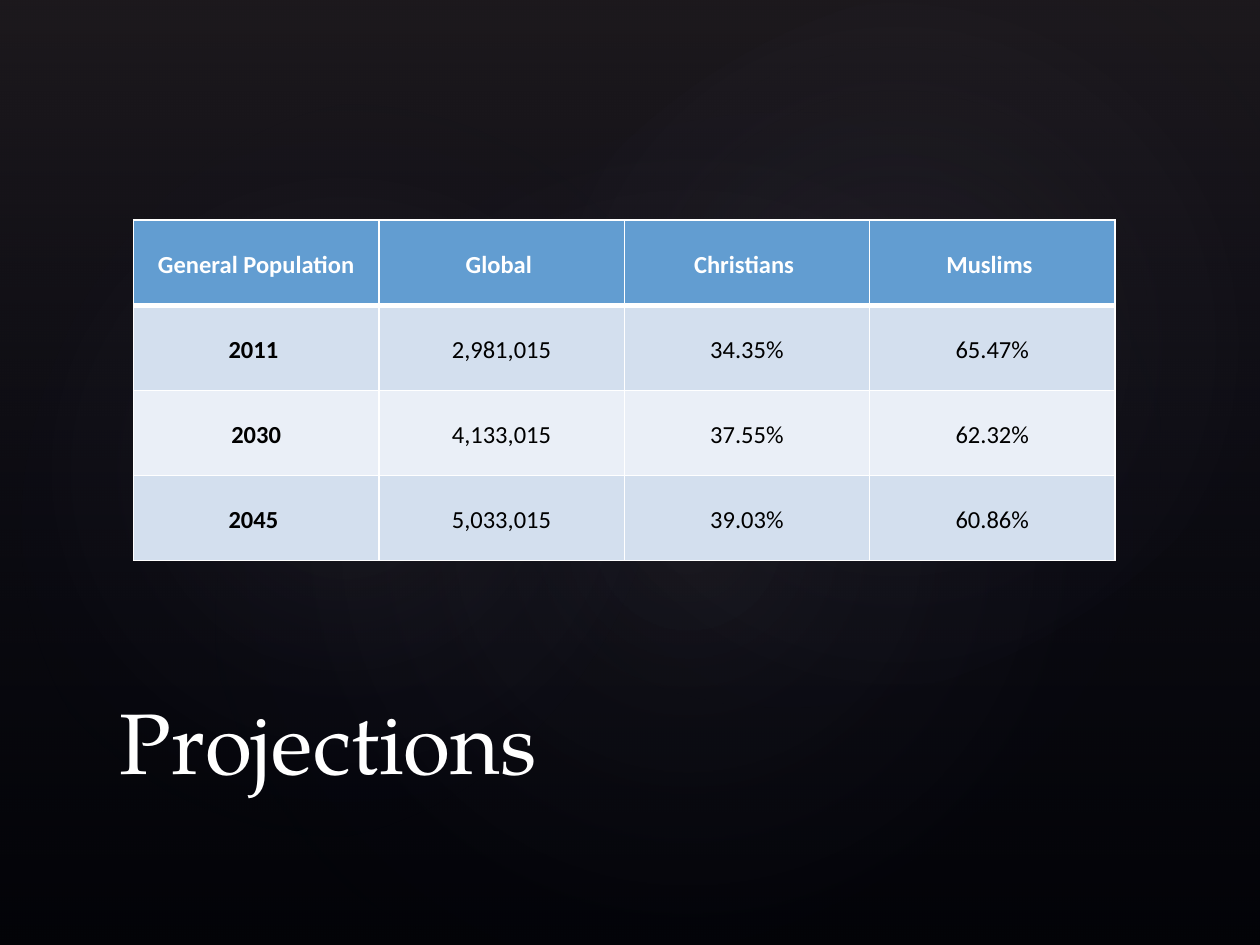
from dataclasses import dataclass
from lxml.etree import SubElement as Sub
from pptx import Presentation
from pptx.dml.color import RGBColor as Rgb
from pptx.enum.shapes import MSO_SHAPE as Kind
from pptx.enum.text import MSO_ANCHOR as Anchor, PP_ALIGN as Align
from pptx.oxml.ns import qn
from pptx.util import Inches, Pt


@dataclass(frozen=True)
class Theme:
    back: str = "000000"
    white: str = "FFFFFF"
    ink: str = "000000"
    head: str = "629DD1"
    bands: tuple = ("D3DFEE", "EAEFF7")
    haze: str = "504652"
    navy: str = "242852"
    glow: str = "C4BCC6"
    serif: str = "TeX Gyre Pagella"
    sans: str = "Calibri"
    title: int = 49
    body: int = 14
    thin: int = 1
    thick: int = 3


THEME = Theme()
WIDE, HIGH = Inches(10), Inches(7.5)
ROWS = (
    ("General Population", "Global ", "Christians ", "Muslims "),
    ("2011 ", "2,981,015", "34.35%", "65.47%"),
    ("2030", "4,133,015", "37.55%", "62.32%"),
    ("2045 ", "5,033,015", "39.03%", "60.86%"),
)
GLOWS = (
    ((15, 15.2, 79.2, 83.2), 328.7, 7),
    ((-3, 17.07, 60.6, 65.33), 294.3, 8),
    ((35.8, 1.73, 70.9, 69.33), 328.7, 8),
)


def share(left, top, width, height):
    return [round(part * size / 100) for part, size in
            zip((left, top, width, height), (WIDE, HIGH, WIDE, HIGH))]


def style(run, size, font, color, bold=False):
    run.font.size = Pt(size)
    run.font.name = font
    run.font.color.rgb = Rgb.from_string(color)
    run.font.bold = bold


def fade(shape, stops, round_fade=False):
    shape.fill.gradient()
    grad = shape.fill._xPr.find(qn("a:gradFill"))
    for child in list(grad):
        grad.remove(child)
    grad.set("rotWithShape", "1")
    items = Sub(grad, qn("a:gsLst"))
    for place, color, alpha in stops:
        stop = Sub(items, qn("a:gs"), pos=str(place * 1000))
        tint = Sub(stop, qn("a:srgbClr"), val=color)
        Sub(tint, qn("a:alpha"), val=str(alpha * 1000))
    if round_fade:
        ring = Sub(grad, qn("a:path"), path="circle")
        Sub(ring, qn("a:fillToRect"), **dict.fromkeys("ltrb", "50000"))
    else:
        Sub(grad, qn("a:lin"), ang=str(90 * 60000), scaled="0")


def add_shade(slide, kind, box, stops, turn=0):
    shape = slide.shapes.add_shape(kind, *box)
    shape.shadow.inherit = False
    shape.line.fill.background()
    shape.rotation = turn
    fade(shape, stops, kind == Kind.OVAL)


def add_back(slide, box):
    fill = slide.background.fill
    fill.solid()
    fill.fore_color.rgb = Rgb.from_string(THEME.back)
    add_shade(slide, Kind.RECTANGLE, box,
              ((0, THEME.haze, 36), (100, THEME.navy, 10)))
    for part, turn, alpha in GLOWS:
        add_shade(slide, Kind.OVAL, share(*part),
                  ((0, THEME.glow, alpha), (58, THEME.navy, 0)), turn)


def edge(cell, widths):
    props = cell._tc.get_or_add_tcPr()
    for index, (side, width) in enumerate(widths.items()):
        line = props.makeelement(qn(f"a:ln{side}"), w=str(Pt(width)))
        Sub(Sub(line, qn("a:solidFill")), qn("a:srgbClr"), val=THEME.white)
        props.insert(index, line)


def fill_cell(cell, text, row, col):
    cell.text_frame.text = text
    cell.vertical_anchor = Anchor.MIDDLE
    if row and col > 1:
        cell.margin_left = cell.margin_right = 0
        cell.margin_top = cell.margin_bottom = 0
    para = cell.text_frame.paragraphs[0]
    para.alignment = Align.CENTER
    para.line_spacing = 1.15
    para.space_after = Pt(10)
    style(para.runs[0], THEME.body, THEME.sans,
          THEME.ink if row else THEME.white, row == 0 or col == 0)
    cell.fill.solid()
    color = THEME.bands[(row - 1) % 2] if row else THEME.head
    cell.fill.fore_color.rgb = Rgb.from_string(color)
    edge(cell, {"L": THEME.thin, "R": THEME.thin,
                "T": THEME.thick if row == 1 else THEME.thin,
                "B": THEME.thin if row else THEME.thick})


def add_grid(slide, box):
    count = len(ROWS[0])
    table = slide.shapes.add_table(len(ROWS), count, *box).table
    for col in table.columns:
        col.width = box[2] // count
    for line in table.rows:
        line.height = box[3] // len(ROWS)
    for row, texts in enumerate(ROWS):
        for col, text in enumerate(texts):
            fill_cell(table.cell(row, col), text, row, col)


def add_title(slide, box):
    frame = slide.shapes.add_textbox(*box).text_frame
    frame.word_wrap = True
    frame.vertical_anchor = Anchor.BOTTOM
    frame.text = "Projections"
    style(frame.paragraphs[0].runs[0], THEME.title, THEME.serif, THEME.white)


def main():
    deck = Presentation()
    deck.slide_width, deck.slide_height = WIDE, HIGH
    slide = deck.slides.add_slide(deck.slide_layouts[6])
    add_back(slide, share(0, 0, 100, 100))
    add_grid(slide, share(10.6, 23.3, 77.9, 36.05))
    add_title(slide, share(8.5, 71.07, 82.5, 13.33))
    deck.save("out.pptx")


if __name__ == "__main__":
    main()
